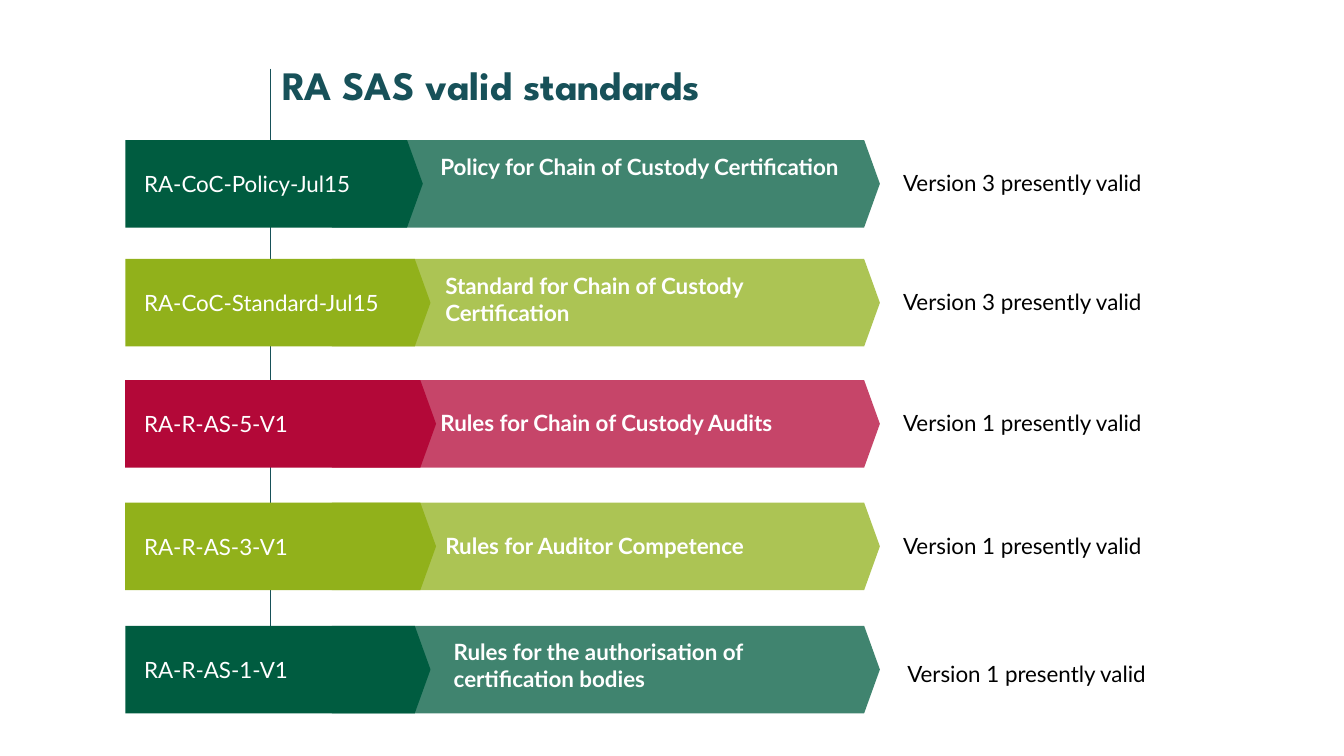
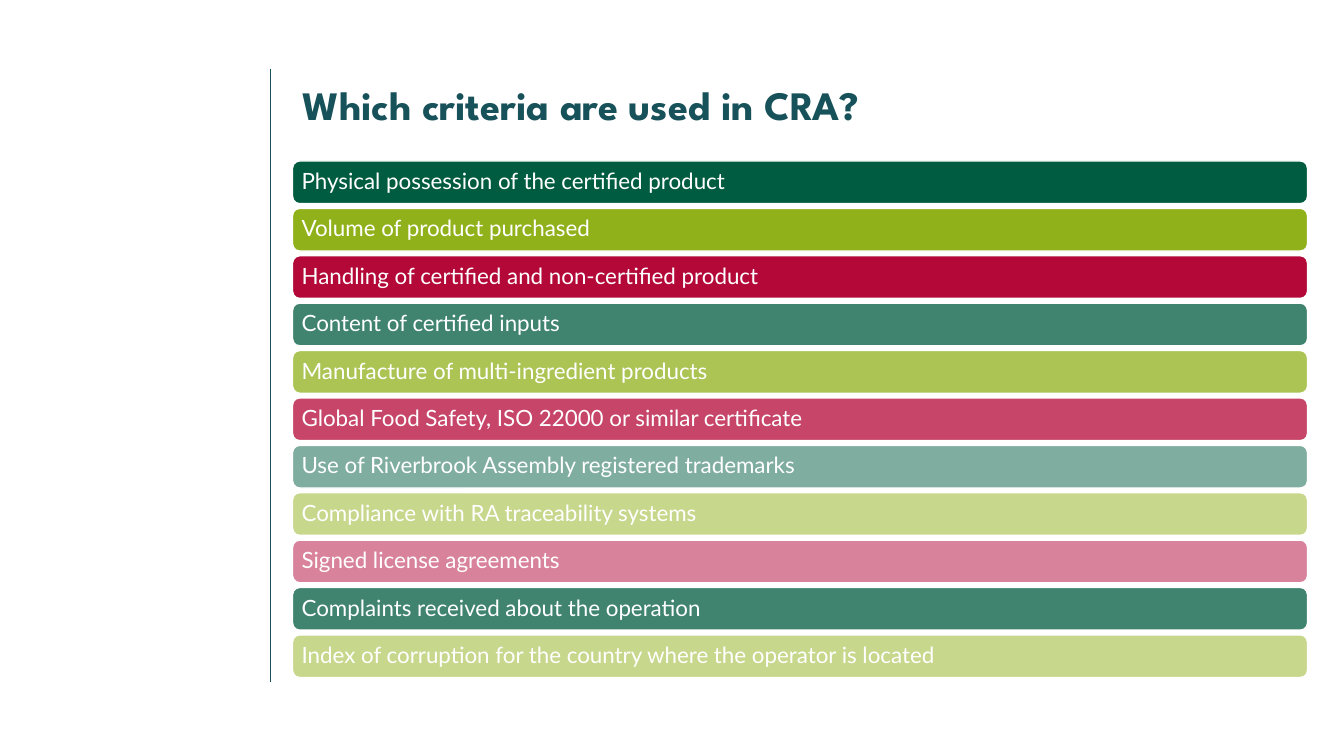
from dataclasses import dataclass

from lxml.etree import SubElement
from pptx import Presentation
from pptx.dml.color import RGBColor
from pptx.enum.shapes import MSO_CONNECTOR, MSO_SHAPE
from pptx.enum.text import MSO_ANCHOR, PP_ALIGN
from pptx.oxml.ns import qn
from pptx.util import Pt


@dataclass(frozen=True)
class Theme:
    green: str = "005C40"
    lime: str = "91B11B"
    red: str = "B30838"
    teal: str = "175159"
    white: str = "FFFFFF"
    black: str = "000000"
    body_font: str = "Lato"
    title_font: str = "League Spartan"
    body_size: float = 16
    title_size: float = 28.8


THEME = Theme()

STANDARDS_TITLE = "RA SAS valid standards"
# fields
STANDARDS = [
    dict(code="RA-CoC-Policy-Jul15", name="Policy for Chain of Custody Certification",
         version=3, color=THEME.green, top=100, code_width=212.5, name_at=(307.5, 6)),
    dict(code="RA-CoC-Standard-Jul15", name="Standard for Chain of Custody Certification",
         version=3, color=THEME.lime, top=185, code_width=218, name_at=(311, 6)),
    dict(code="RA-R-AS-5-V1", name="Rules for Chain of Custody Audits",
         version=1, color=THEME.red, top=271.5, code_width=222, name_at=(307.5, 17.5)),
    dict(code="RA-R-AS-3-V1", name="Rules for Auditor Competence",
         version=1, color=THEME.lime, top=359, code_width=222, name_at=(311, 17.5)),
    dict(code="RA-R-AS-1-V1", name="Rules for the authorisation of certification bodies",
         version=1, color=THEME.green, top=447, code_width=218, name_at=(317, 5.5),
         version_at=(641, 21)),
]

CRITERIA_TITLE = "Which criteria are used in CRA?"
CRITERIA = [
    ("Physical possession of the certified product", THEME.green, 100),
    ("Volume of product purchased", THEME.lime, 100),
    ("Handling of certified and non-certified product", THEME.red, 100),
    ("Content of certified inputs", THEME.green, 75),
    ("Manufacture of multi-ingredient products", THEME.lime, 75),
    ("Global Food Safety, ISO 22000 or similar certificate", THEME.red, 75),
    ("Use of Riverbrook Assembly registered trademarks", THEME.green, 50),
    ("Compliance with RA traceability systems", THEME.lime, 50),
    ("Signed license agreements", THEME.red, 50),
    ("Complaints received about the operation", THEME.green, 75),
    ("Index of corruption for the country where the operator is located", THEME.lime, 50),
]


def rgb(color):
    return RGBColor.from_string(color)


def write(shape, text, color, size=THEME.body_size, font=THEME.body_font, bold=False):
    frame = shape.text_frame
    frame.word_wrap = True
    para = frame.paragraphs[0]
    para.text = text
    para.alignment = PP_ALIGN.LEFT
    para.font.name = font
    para.font.size = Pt(size)
    para.font.bold = bold
    para.font.color.rgb = rgb(color)
    return para


def add_text(page, left, top, width, height, text, color, **style):
    box = page.shapes.add_textbox(Pt(left), Pt(top), Pt(width), Pt(height))
    box.text_frame.vertical_anchor = MSO_ANCHOR.TOP
    write(box, text, color, **style)


def add_bar(page, kind, left, top, width, height, color, opacity=100):
    bar = page.shapes.add_shape(kind, Pt(left), Pt(top), Pt(width), Pt(height))
    bar.shadow.inherit = False
    bar.fill.solid()
    bar.fill.fore_color.rgb = rgb(color)
    if opacity < 100:
        fill_color = bar.element.spPr.find(".//" + qn("a:srgbClr"))
        SubElement(fill_color, qn("a:alpha")).set("val", str(opacity * 1000))
    bar.line.fill.background()
    return bar


def label_bar(bar, text, inset):
    frame = bar.text_frame
    frame.vertical_anchor = MSO_ANCHOR.MIDDLE
    frame.margin_left = Pt(inset)
    return write(bar, text, THEME.white)


def add_page(deck, title, left, top):
    page = deck.slides.add_slide(deck.slide_layouts[6])
    rule = page.shapes.add_connector(MSO_CONNECTOR.STRAIGHT, Pt(193), Pt(49), Pt(193), Pt(487))
    rule.line.color.rgb = rgb(THEME.teal)
    rule.line.width = Pt(0.5)
    SubElement(rule.element.spPr, qn("a:effectLst"))
    add_text(page, left, top, 725, 29.5, title, THEME.teal,
             size=THEME.title_size, font=THEME.title_font, bold=True)
    return page


def add_arrow(page, left, top, width, color, opacity=100):
    arrow = add_bar(page, MSO_SHAPE.PENTAGON, left, top, width, 62.5, color, opacity)
    arrow.adjustments[0] = 0.18
    return arrow


def build_standards(deck):
    page = add_page(deck, STANDARDS_TITLE, 195, 39.5)
    for row in STANDARDS:
        top, color = row["top"], row["color"]
        add_arrow(page, 237, top, 391.5, color, 75)
        label_bar(add_arrow(page, 89.5, top, row["code_width"], color), row["code"], 13.5)
        name_left, name_drop = row["name_at"]
        add_text(page, name_left, top + name_drop, 617.5 - name_left, 46,
                 row["name"], THEME.white, bold=True)
        version_left, version_drop = row.get("version_at", (638, 17.5))
        add_text(page, version_left, top + version_drop, 246, 26.5,
                 f"Version {row['version']} presently valid", THEME.black)


def build_criteria(deck):
    page = add_page(deck, CRITERIA_TITLE, 209, 53.5)
    first_top, pitch, height = 115, 33.85, 30.5
    for index, (text, color, opacity) in enumerate(CRITERIA):
        bar = add_bar(page, MSO_SHAPE.ROUNDED_RECTANGLE, 209, first_top + index * pitch,
                      725, height, color, opacity)
        bar.line.color.rgb = rgb(THEME.white)
        bar.line.width = Pt(1)
        label_bar(bar, text, 5).line_spacing = 0.9


def main():
    deck = Presentation()
    deck.slide_width, deck.slide_height = Pt(960), Pt(540)
    build_standards(deck)
    build_criteria(deck)
    deck.save("out.pptx")


if __name__ == "__main__":
    main()
